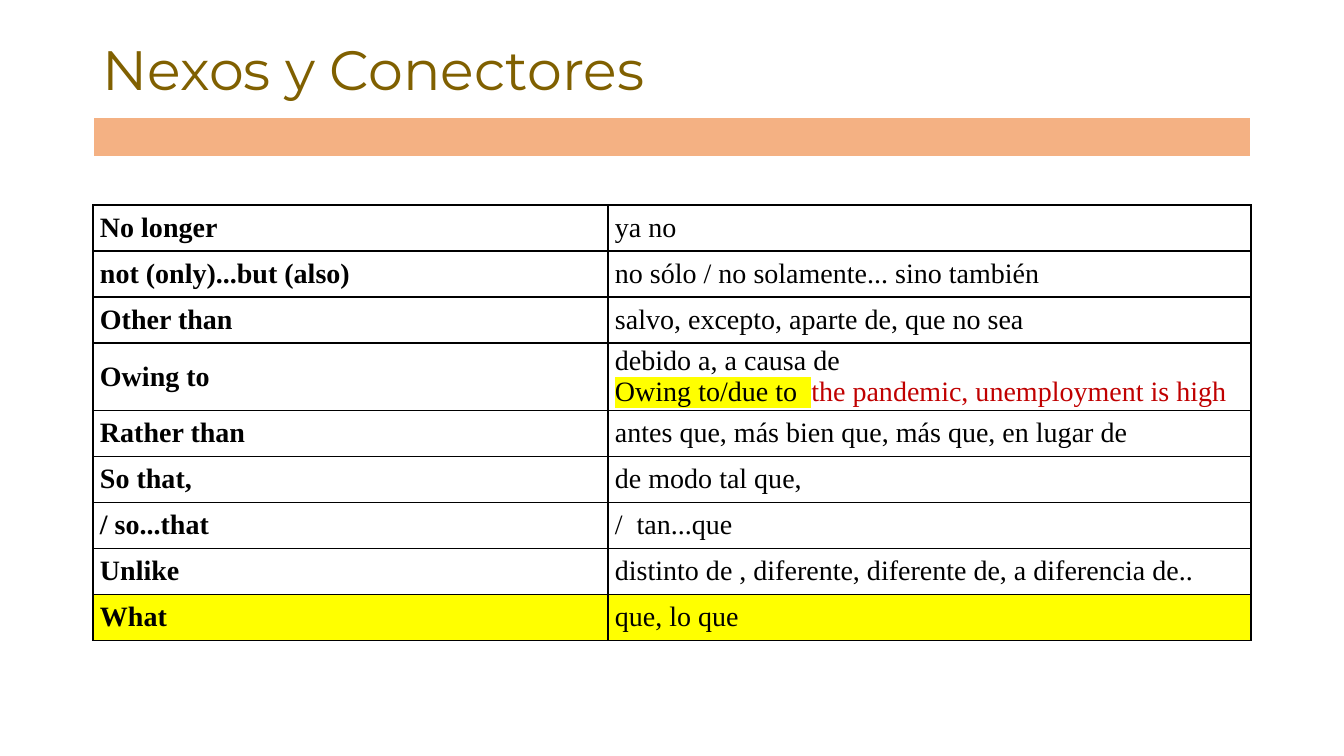
from pptx import Presentation
from pptx.dml.color import RGBColor as Rgb
from pptx.enum.text import MSO_ANCHOR as Anchor
from pptx.oxml import parse_xml
from pptx.oxml.ns import nsdecls, qn
from pptx.util import Pt

# Content: a cell is a list of lines, a line is a list of (text, style) runs
TITLE = "Nexos y Conectores"


def plain(text):
    return [[(text, "plain")]]


ROWS = [
    ("No longer", plain("ya no")),
    ("not (only)...but (also)", plain("no sólo / no solamente... sino también")),
    ("Other than", plain("salvo, excepto, aparte de, que no sea")),
    ("Owing to", plain("debido a, a causa de") + [[
        ("Owing to/due to  ", "mark"),
        ("the pandemic, unemployment is high", "red")]]),
    ("Rather than", plain("antes que, más bien que, más que, en lugar de")),
    ("So that,", plain("de modo tal que,")),
    ("/ so...that", plain("/  tan...que")),
    ("Unlike", plain("distinto de , diferente, diferente de, a diferencia de..")),
    ("What", plain("que, lo que")),
]
LIT = {"What"}

# Theme
THEME = {
    "title": {"name": "Montserrat", "size": Pt(39.6), "color": "806000"},
    "term": {"name": "Times New Roman", "size": Pt(20), "color": "000000", "bold": True},
    "plain": {"name": "Times New Roman", "size": Pt(20), "color": "000000", "bold": False},
    "bar": "F4B183", "paper": "FFFFFF", "glow": "FFFF00", "line": "000000",
}
THEME["red"] = {**THEME["plain"], "color": "C00000"}
THEME["mark"] = {**THEME["plain"], "mark": THEME["glow"]}

# Layout in px
WIDE, HIGH = 1344, 756
LEFT, SPAN = 93, 1158
COLS = [515, SPAN - 515]
ROW, LINE = 46, 31
UNIT = 12192000 / WIDE


def px(n):
    return round(n * UNIT)


def box(*sides):
    return [px(n) for n in sides]


def write(para, text, style):
    run = para.add_run()
    run.text = text
    for key, val in THEME[style].items():
        if key == "color":
            run.font.color.rgb = Rgb.from_string(val)
        elif key != "mark":
            setattr(run.font, key, val)
    if "mark" in THEME[style]:
        fill = run.font.fill._xPr.find(qn("a:solidFill"))
        fill.addnext(parse_xml(
            f'<a:highlight {nsdecls("a")}><a:srgbClr val="{THEME[style]["mark"]}"/></a:highlight>'))


def paint(cell, fill, line, sizes):
    cell.fill.solid()
    cell.fill.fore_color.rgb = Rgb.from_string(fill)
    props = cell._tc.get_or_add_tcPr()
    for i, (side, size) in enumerate(zip("LRTB", sizes)):
        props.insert(i, parse_xml(
            f'<a:ln{side} {nsdecls("a")} w="{Pt(size)}"><a:solidFill>'
            f'<a:srgbClr val="{line}"/></a:solidFill></a:ln{side}>'))


def grid(slide, top, cols, rows):
    table = slide.shapes.add_table(
        len(rows), len(cols), *box(LEFT, top, sum(cols), sum(rows))).table
    for col, wide in zip(table.columns, cols):
        col.width = px(wide)
    for row, high in zip(table.rows, rows):
        row.height = px(high)
    return table


def main():
    deck = Presentation()
    deck.slide_width, deck.slide_height = box(WIDE, HIGH)
    slide = deck.slides.add_slide(deck.slide_layouts[6])

    # Title
    frame = slide.shapes.add_textbox(*box(LEFT, 40, SPAN, 64)).text_frame
    frame.word_wrap = True
    frame.vertical_anchor = Anchor.MIDDLE
    frame.paragraphs[0].line_spacing = 0.9
    write(frame.paragraphs[0], TITLE, "title")

    # Colour bar
    bar = grid(slide, 117, [SPAN], [41])
    paint(bar.cell(0, 0), THEME["bar"], THEME["paper"], (1, 1, 1, 3))

    # Word table: rows grow with their lines
    highs = [max(ROW, LINE * len(lines)) for _, lines in ROWS]
    table = grid(slide, 205, COLS, highs)
    for r, (term, lines) in enumerate(ROWS):
        fill = THEME["glow" if term in LIT else "paper"]
        for c, body in enumerate(([[(term, "term")]], lines)):
            cell = table.cell(r, c)
            form = {"margin_left": px(7), "margin_right": px(7), "margin_top": 0,
                    "margin_bottom": 0, "vertical_anchor": Anchor.MIDDLE}
            for key, val in form.items():
                setattr(cell, key, val)
            paint(cell, fill, THEME["line"], (1, 1, 1, 1))
            for i, runs in enumerate(body):
                text = cell.text_frame
                para = text.add_paragraph() if i else text.paragraphs[0]
                for run in runs:
                    write(para, *run)

    deck.save("out.pptx")


if __name__ == "__main__":
    main()
